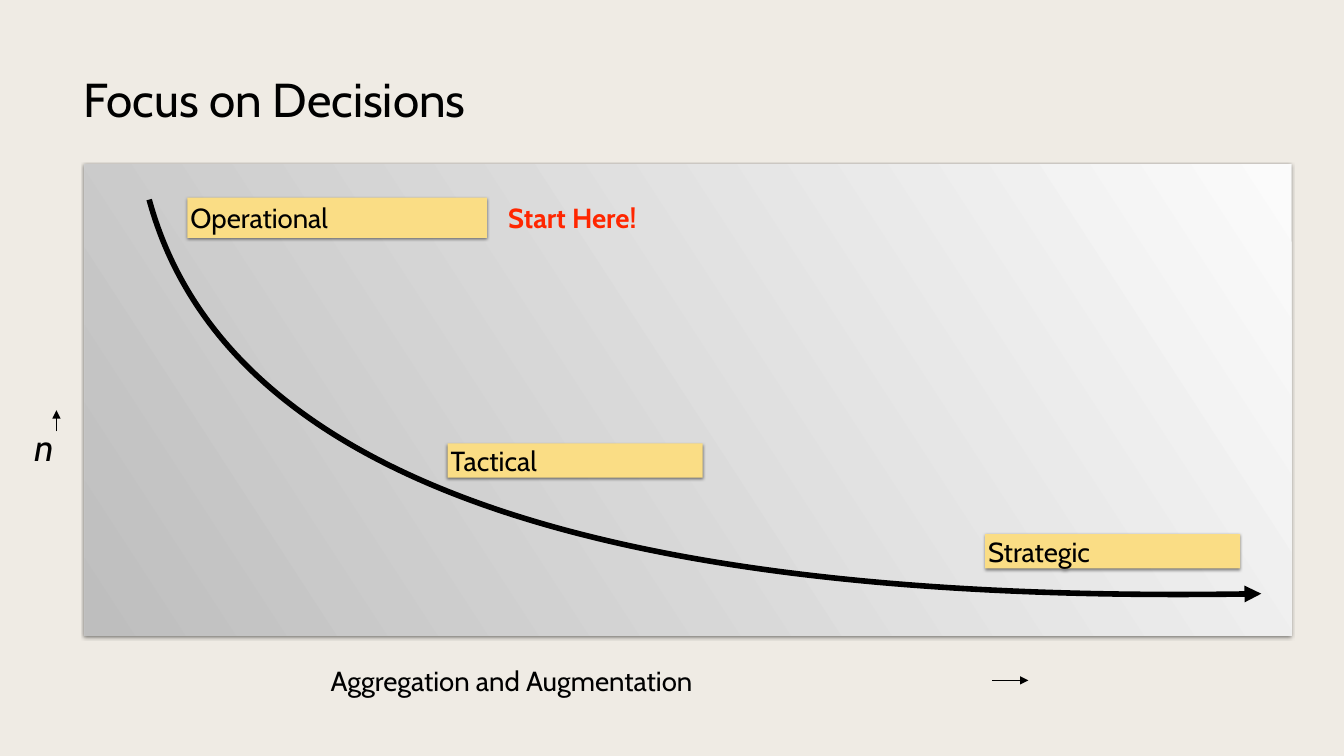
"""Build the "Focus on Decisions" slide: a decision curve with three labelled levels."""
from lxml import etree
from pptx import Presentation
from pptx.dml.color import RGBColor
from pptx.enum.shapes import MSO_CONNECTOR, MSO_SHAPE
from pptx.enum.text import MSO_ANCHOR, PP_ALIGN
from pptx.oxml.ns import qn
from pptx.util import Pt

PX = 9144
STRAIGHT, RECT = MSO_CONNECTOR.STRAIGHT, MSO_SHAPE.RECTANGLE
MIDDLE, LEFT = MSO_ANCHOR.MIDDLE, PP_ALIGN.LEFT
BACKGROUND = RGBColor(0xEF, 0xEB, 0xE4)
BLACK = RGBColor(0, 0, 0)
RED = RGBColor(0xFF, 0x26, 0x00)
YELLOW = RGBColor(0xFA, 0xDD, 0x85)
LIGHT = RGBColor(0xFB, 0xFB, 0xFB)
GREY = RGBColor(0xBE, 0xBE, 0xBE)


def write(sp, text, size, inset=3, color=BLACK, **formats):
    """Fill a text shape with one formatted, vertically centred line."""
    tf = sp.text_frame
    frame = dict(word_wrap=True, vertical_anchor=MIDDLE)
    for side in ("left", "top", "right", "bottom"):
        frame["margin_" + side] = inset * PX
    for name, value in frame.items():
        setattr(tf, name, value)
    p = tf.paragraphs[0]
    p.alignment = LEFT
    r = p.add_run()
    r.text = text
    for name, value in dict(name="Cabin", size=Pt(size), **formats).items():
        setattr(r.font, name, value)
    r.font.color.rgb = color
    return p


def add_panel(*box):
    """Add a borderless rectangle with a soft shadow below it."""
    sp = s.shapes.add_shape(RECT, *(v * PX for v in box))
    sp.line.fill.background()
    sp.shadow.inherit = False
    effects = sp._element.spPr.find(qn("a:effectLst"))
    shadow = etree.SubElement(effects, qn("a:outerShdw"), blurRad=str(Pt(2)),
                              dist=str(Pt(1)), dir="5400000", rotWithShape="0")
    tint = etree.SubElement(shadow, qn("a:srgbClr"), val=str(BLACK))
    etree.SubElement(tint, qn("a:alpha"), val="50000")
    return sp


prs = Presentation()
prs.slide_width, prs.slide_height = 1333 * PX, 750 * PX
s = prs.slides.add_slide(prs.slide_layouts[5])
s.background.fill.solid()
s.background.fill.fore_color.rgb = BACKGROUND

title = s.shapes.title
title.left, title.top, title.width, title.height = (v * PX for v in (79, 39, 640, 125))
write(title, "Focus on Decisions", 34, inset=4).line_spacing = 0.9

chart_area = add_panel(84, 163, 1197, 468)
chart_area.fill.gradient()
chart_area.fill.gradient_angle = 213
for stop, color in zip(chart_area.fill.gradient_stops, (LIGHT, GREY)):
    stop.color.rgb = color

for x1, y1, x2, y2 in ((984, 675, 1020, 675), (56, 428, 56, 407)):
    arrow = s.shapes.add_connector(STRAIGHT, x1 * PX, y1 * PX, x2 * PX, y2 * PX)
    arrow.line.color.rgb = BLACK
    arrow.line.width = Pt(1)
    etree.SubElement(arrow.line._get_or_add_ln(), qn("a:tailEnd"), type="triangle")
    etree.SubElement(arrow._element.spPr, qn("a:effectLst"))

builder = s.shapes.build_freeform(1251, 589, scale=PX)
builder.add_line_segments([(590, 601), (222, 470), (148, 198)], close=False)
curve = builder.convert_to_shape()
curve.height = 392 * PX
path = next(curve._element.iter(qn("a:path")))
path.set("h", "392")
bezier = etree.SubElement(path, qn("a:cubicBezTo"))
for segment in path.findall(qn("a:lnTo")):
    bezier.append(segment[0])
    path.remove(segment)
curve.fill.background()
curve.line.color.rgb = BLACK
curve.line.width = Pt(4)
etree.SubElement(curve.line._get_or_add_ln(), qn("a:headEnd"), type="triangle")
curve.shadow.inherit = False

for level, *box in (("Operational", 186, 196, 297, 40),
                    ("Tactical", 444, 440, 253, 34),
                    ("Strategic", 977, 530, 253, 34)):
    label = add_panel(*box)
    label.fill.solid()
    label.fill.fore_color.rgb = YELLOW
    write(label, level, 19.7)

for text, box, formats in (
        ("n", (31, 415, 49, 57), dict(size=26.7, italic=True)),
        ("Aggregation and Augmentation", (325, 653, 720, 44), dict(size=19.7)),
        ("Start Here!", (501, 194, 279, 44), dict(size=19.7, color=RED, bold=True))):
    write(s.shapes.add_textbox(*(v * PX for v in box)), text, **formats)

prs.save("out.pptx")
